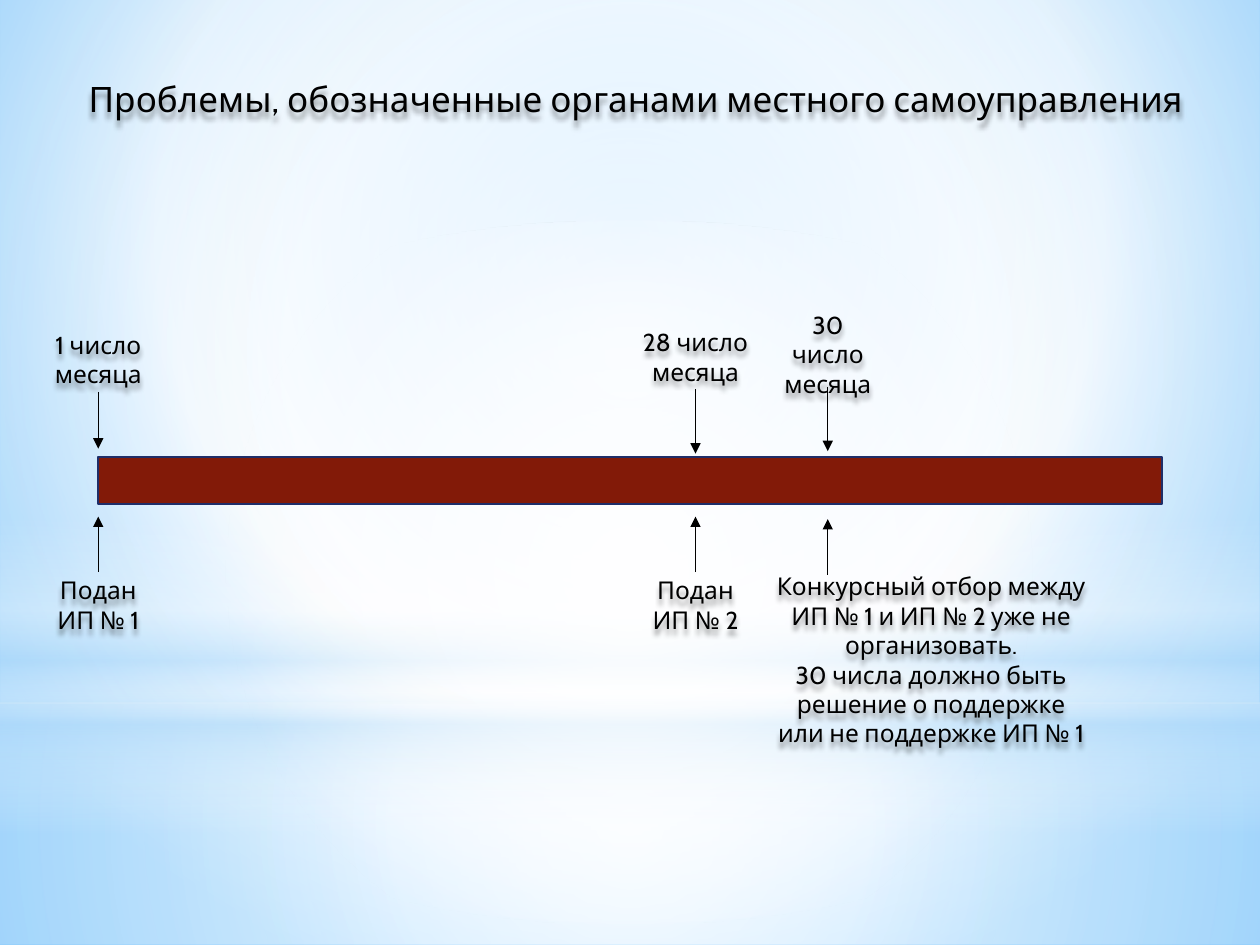
import pptx
import pptx.dml.color
import pptx.enum.shapes
import pptx.enum.text
import pptx.oxml
import pptx.oxml.ns
import pptx.util
from pptx.util import Inches

RGBColor = pptx.dml.color.RGBColor
SHAPE = pptx.enum.shapes.MSO_SHAPE
BLACK = RGBColor(0x00, 0x00, 0x00)
WHITE = RGBColor(0xFF, 0xFF, 0xFF)
PALE_BLUE = RGBColor(0xB4, 0xDC, 0xFA)
SKY_BLUE = RGBColor(0x9E, 0xD5, 0xFF)
DEEP_BLUE = RGBColor(0x5B, 0xB9, 0xFF)
BAR_RED = RGBColor(0x82, 0x1A, 0x08)
BAR_EDGE = RGBColor(0x1F, 0x2E, 0x69)
FONT = "Cabin"
CENTRE = (50, 50, 50, 50)
TOP, BOTTOM = 0, 2


def parse(xml):
    namespace = pptx.oxml.ns.nsdecls("a")
    return pptx.oxml.parse_xml(xml.replace(">", f" {namespace}>", 1))


def set_gradient(element, fill, stops, focus=None, angle=90):
    """Stops are (position, colour, opacity) in percent; a focus makes it radial."""
    fill.gradient()
    gradient = next(element.iter(pptx.oxml.ns.qn("a:gradFill")))
    for child in list(gradient):
        gradient.remove(child)
    stop_xml = "".join(
        f'<a:gs pos="{position * 1000}"><a:srgbClr val="{colour}">'
        f'<a:alpha val="{opacity * 1000}"/></a:srgbClr></a:gs>'
        for position, colour, opacity in stops)
    gradient.append(parse(f"<a:gsLst>{stop_xml}</a:gsLst>"))
    if focus:
        sides = " ".join(f'{side}="{value * 1000}"' for side, value in zip("ltrb", focus))
        gradient.append(parse(f'<a:path path="circle"><a:fillToRect {sides}/></a:path>'))
    else:
        gradient.append(parse(f'<a:lin ang="{angle * 60000}" scaled="0"></a:lin>'))


def add_glow(slide, kind, box, stops, focus=None):
    shape = slide.shapes.add_shape(kind, *map(Inches, box))
    shape.shadow.inherit = False
    shape.line.fill.background()
    set_gradient(shape.element, shape.fill, stops, focus)


def add_backdrop(slide, width, height, horizon):
    set_gradient(slide.element, slide.background.fill,
                 [(0, SKY_BLUE, 100), (60, WHITE, 100), (100, DEEP_BLUE, 100)],
                 (20, 10, 20, 60))
    add_glow(slide, SHAPE.RECTANGLE, (0, horizon, width, height - horizon),
             [(0, WHITE, 91), (37, WHITE, 76), (100, PALE_BLUE, 79)], CENTRE)
    add_glow(slide, SHAPE.RECTANGLE, (0, 0, width, horizon),
             [(0, WHITE, 89), (48, WHITE, 62), (100, PALE_BLUE, 79)], CENTRE)
    add_glow(slide, SHAPE.RECTANGLE, (0, 4.12, width, 2.5),
             [(0, WHITE, 0), (29, WHITE, 30), (45, PALE_BLUE, 40),
              (55, WHITE, 26), (65, PALE_BLUE, 60), (100, WHITE, 0)])
    add_glow(slide, SHAPE.OVAL, (0, 1.75, width, horizon),
             [(0, WHITE, 100), (56, WHITE, 0)], CENTRE)


def add_text(slide, box, *paragraphs, size=14, colour=BLACK):
    shape = slide.shapes.add_textbox(*map(Inches, box))
    frame = shape.text_frame
    frame.word_wrap = True
    frame.vertical_anchor = pptx.enum.text.MSO_ANCHOR.MIDDLE
    frame.text = "\n".join(paragraphs)
    for paragraph in frame.paragraphs:
        paragraph.alignment = pptx.enum.text.PP_ALIGN.CENTER
        font = paragraph.runs[0].font
        font.name, font.size = FONT, pptx.util.Pt(size)
        font.color.rgb = colour
    shape.element.spPr.append(parse(
        '<a:effectLst><a:outerShdw blurRad="38100" dist="38100" dir="5400000">'
        '<a:srgbClr val="000000"><a:alpha val="40000"/></a:srgbClr>'
        '</a:outerShdw></a:effectLst>'))
    return shape


def add_arrow(slide, x, start, end, label=None, side=BOTTOM):
    arrow = slide.shapes.add_connector(pptx.enum.shapes.MSO_CONNECTOR.STRAIGHT,
                                       Inches(x), Inches(start), Inches(x), Inches(end))
    if label is not None:
        arrow.begin_connect(label, side)
    arrow.line.color.rgb = BLACK
    arrow.line.width = pptx.util.Pt(0.75)
    arrow.line._get_or_add_ln().append(parse('<a:tailEnd type="triangle"></a:tailEnd>'))
    arrow.element.spPr.append(parse("<a:effectLst></a:effectLst>"))


def add_bar(slide, left, top, width, height):
    bar = slide.shapes.add_shape(SHAPE.RECTANGLE, *map(Inches, (left, top, width, height)))
    bar.shadow.inherit = False
    bar.fill.solid()
    bar.fill.fore_color.rgb = BAR_RED
    bar.line.color.rgb = BAR_EDGE
    bar.line.width = pptx.util.Pt(1.25)


def add_timeline(slide, left, top, width, height):
    add_bar(slide, left, top, width, height)
    label_height = 0.52
    # offset along the bar, label width, label top and arrow tip above the bar, text
    dates = [
        (0, 0.95, 1.04, 0.07, "1 число месяца"),
        (4.74, 1.05, 1.06, 0.03, "28 число месяца"),
        (5.79, 1.05, 1.08, 0.05, "30 число месяца"),
    ]
    for offset, label_width, rise, gap, text in dates:
        x = left + offset
        label = add_text(slide, (x - label_width / 2, top - rise, label_width, label_height), text)
        add_arrow(slide, x, top - rise + label_height, top - gap, label, BOTTOM)

    event_top, arrow_length, event_width = top + 0.91, 0.44, 1.05
    for offset, text in [(0, "Подан ИП № 1"), (4.74, "Подан ИП № 2")]:
        x = left + offset
        label = add_text(slide, (x - event_width / 2, event_top, event_width, label_height), text)
        add_arrow(slide, x, event_top, event_top - arrow_length, label, TOP)

    outcome_x, outcome_top = left + 5.79, event_top + 0.02
    add_text(slide, (outcome_x - event_width / 2, outcome_top, 2.69, 1.35),
             "Конкурсный отбор между ИП № 1 и ИП № 2 уже не организовать.",
             "30 числа должно быть решение о поддержке или не поддержке ИП № 1")
    add_arrow(slide, outcome_x, outcome_top, outcome_top - arrow_length)


def main():
    presentation = pptx.Presentation()
    presentation.slide_width = Inches(10)
    presentation.slide_height = Inches(7.5)
    slide = presentation.slides.add_slide(presentation.slide_layouts[6])
    add_backdrop(slide, 10, 7.5, horizon=5.58)
    add_timeline(slide, 0.78, 3.63, 8.44, 0.37)
    add_text(slide, (0.46, 0.38, 9.17, 0.81),
             "Проблемы, обозначенные органами местного самоуправления", size=20)
    presentation.save("out.pptx")


if __name__ == "__main__":
    main()
